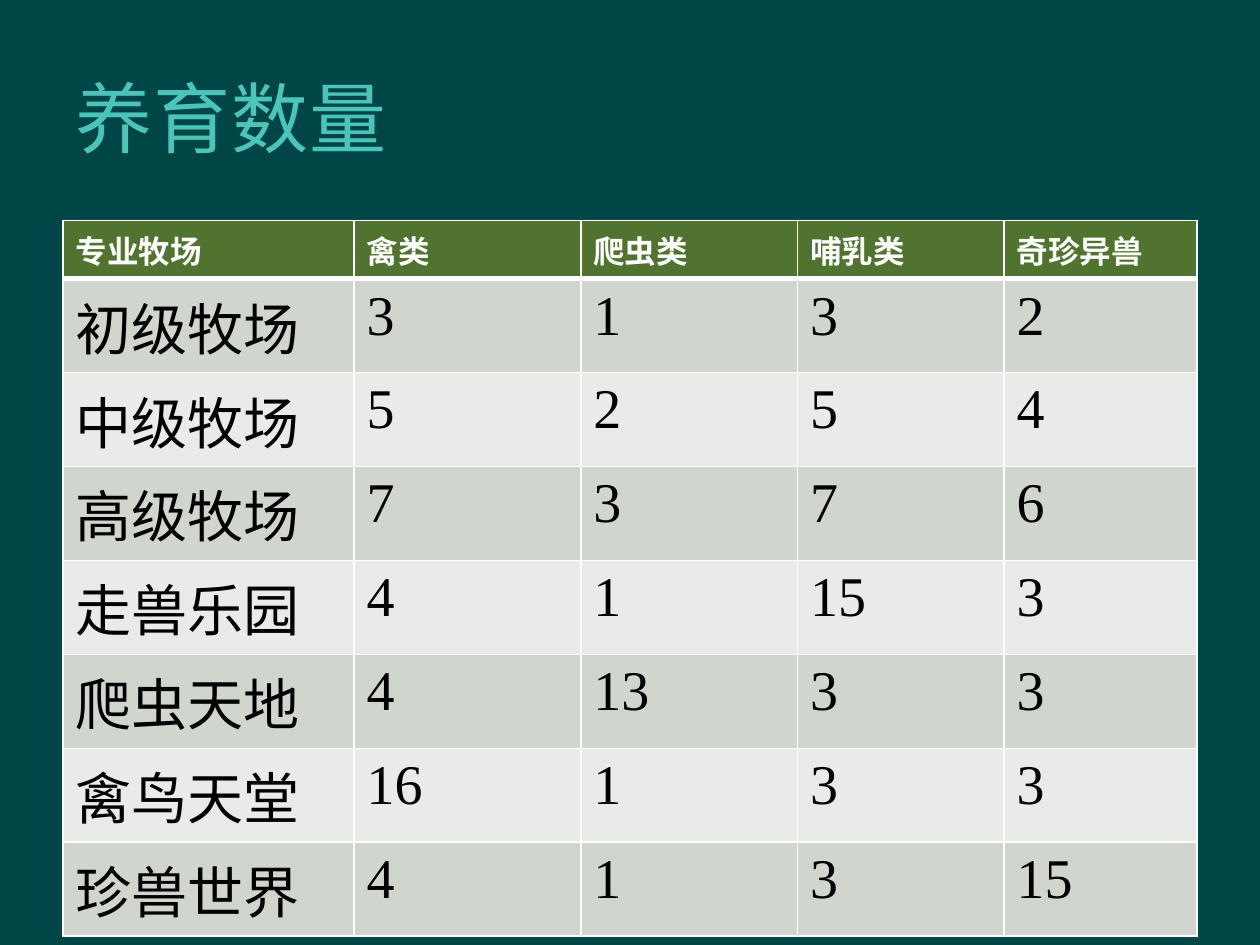
from lxml import etree
from pptx import Presentation
from pptx.dml.color import RGBColor
from pptx.enum.text import MSO_ANCHOR, PP_ALIGN
from pptx.oxml.ns import qn
from pptx.util import Inches, Pt

LEFT = PP_ALIGN.LEFT
MIDDLE = MSO_ANCHOR.MIDDLE

BACKGROUND = "004646"
TITLE_COLOR = "4BC5B9"
WHITE = "FFFFFF"
BLACK = "000000"
HEADER_FILL = "50742F"
BAND_FILLS = ("E9EBE8", "D0D6CD")

COLUMN_WIDTHS = (2.31, 1.8, 1.72, 1.64, 1.53)
ROW_HEIGHT = 0.41
ROWS = (
    ("专业牧场", "禽类", "爬虫类", "哺乳类", "奇珍异兽"),
    ("初级牧场", 3, 1, 3, 2),
    ("中级牧场", 5, 2, 5, 4),
    ("高级牧场", 7, 3, 7, 6),
    ("走兽乐园", 4, 1, 15, 3),
    ("爬虫天地", 4, 13, 3, 3),
    ("禽鸟天堂", 16, 1, 3, 3),
    ("珍兽世界", 4, 1, 3, 15),
)


def rgb(value):
    return RGBColor.from_string(value)


class RanchPage:
    """Hold the deck, its current slide and the shared text style."""

    def __init__(self):
        self.deck = Presentation()
        self.deck.slide_width = Inches(10)
        self.deck.slide_height = Inches(7.5)
        self.page = self.deck.slides.add_slide(self.deck.slide_layouts[5])
        background = self.page.background.fill
        background.solid()
        background.fore_color.rgb = rgb(BACKGROUND)

    def style_text(self, frame, font_name, size, color, bold=False):
        para = frame.paragraphs[0]
        para.alignment = LEFT
        for span in para.runs:
            span.font.name = font_name
            span.font.size = Pt(size)
            span.font.bold = bold
            span.font.color.rgb = rgb(color)

    def add_title(self, text):
        title = self.page.shapes.title
        title.left, title.top = Inches(0.5), Inches(0.3)
        title.width, title.height = Inches(8.5), Inches(1.25)
        frame = title.text_frame
        frame.text = text
        frame.vertical_anchor = MIDDLE
        self.style_text(frame, "Arial", 44, TITLE_COLOR)
        properties = frame.paragraphs[0].runs[0].font._element
        properties.set("spc", "50")

    def add_borders(self, cell, top, bottom):
        properties = cell._tc.get_or_add_tcPr()
        for side, width in (("L", 1), ("R", 1), ("T", top), ("B", bottom)):
            line = etree.SubElement(properties, qn(f"a:ln{side}"), w=str(Pt(width)))
            fill = etree.SubElement(line, qn("a:solidFill"))
            etree.SubElement(fill, qn("a:srgbClr"), val=WHITE)

    def add_cell(self, cell, value, row):
        header = row == 0
        self.add_borders(cell, top=3 if row == 1 else 1, bottom=3 if header else 1)
        cell.fill.solid()
        cell.fill.fore_color.rgb = rgb(HEADER_FILL if header else BAND_FILLS[row % 2])
        cell.text_frame.text = str(value)
        size, color = (18, WHITE) if header else (32, BLACK)
        self.style_text(cell.text_frame, "Times New Roman", size, color, header)

    def add_table(self, rows):
        frame = self.page.shapes.add_table(
            len(rows), len(COLUMN_WIDTHS), Inches(0.5), Inches(1.75),
            Inches(sum(COLUMN_WIDTHS)), Inches(ROW_HEIGHT * len(rows)))
        table = frame.table
        for column, width in zip(table.columns, COLUMN_WIDTHS):
            column.width = Inches(width)
        for row, values in enumerate(rows):
            table.rows[row].height = Inches(ROW_HEIGHT)
            for column, value in enumerate(values):
                self.add_cell(table.cell(row, column), value, row)


def main():
    ranch = RanchPage()
    ranch.add_title("养育数量")
    ranch.add_table(ROWS)
    ranch.deck.save("out.pptx")


if __name__ == "__main__":
    main()
